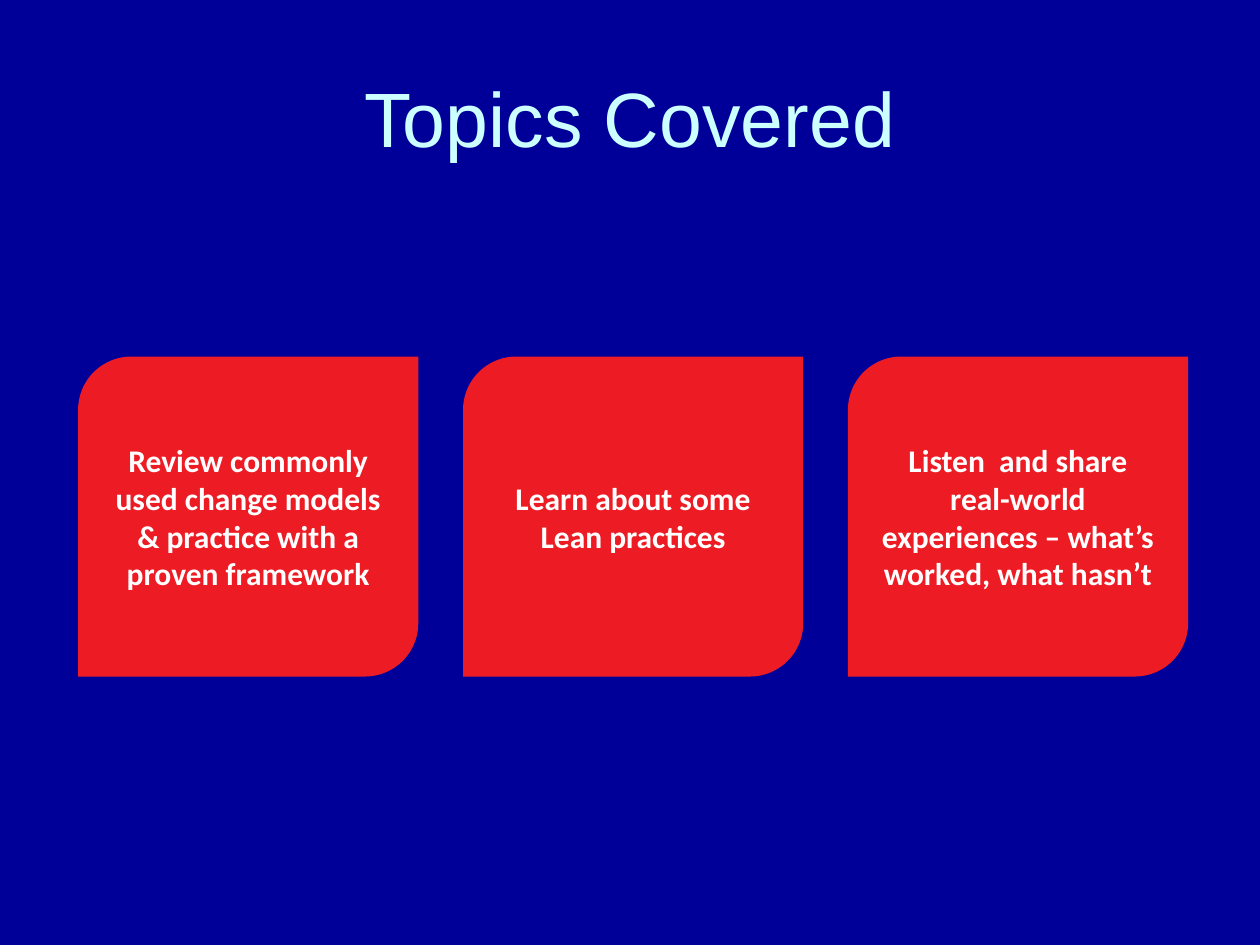
from dataclasses import dataclass

from pptx import Presentation
from pptx.dml.color import RGBColor
from pptx.enum.shapes import MSO_SHAPE
from pptx.enum.text import MSO_ANCHOR, PP_ALIGN
from pptx.util import Inches, Pt

CARD_SHAPE = MSO_SHAPE.ROUND_2_DIAG_RECTANGLE
MIDDLE = MSO_ANCHOR.MIDDLE
CENTER = PP_ALIGN.CENTER


@dataclass(frozen=True)
class Theme:
    """Colours, fonts and type sizes of the deck."""
    background: str = "000099"
    card: str = "ED1C24"
    card_text: str = "FFFFFF"
    title_text: str = "CCFFFF"
    title_font: str = "Arial"
    card_font: str = "Calibri"
    title_size: int = 44
    card_size: int = 18


THEME = Theme()
TOPICS = [
    "Review commonly used change models & practice with a proven framework",
    "Learn about some\nLean practices",
    "Listen  and share\nreal-world experiences – what’s worked, what hasn’t",
]


def write_text(shape, text, *, font, size, color, bold=False):
    """Write centred text into a shape, with newlines as line breaks."""
    frame = shape.text_frame
    frame.word_wrap = True
    frame.vertical_anchor = MIDDLE
    para = frame.paragraphs[0]
    para.text = text
    para.alignment = CENTER
    for span in para.runs:
        span.font.name = font
        span.font.size = Pt(size)
        span.font.bold = bold
        span.font.color.rgb = RGBColor.from_string(color)


def add_title(page, text, left, top, width, height):
    """Place the slide title in the given box."""
    box = page.shapes.add_textbox(left, top, width, height)
    write_text(box, text, font=THEME.title_font, size=THEME.title_size,
               color=THEME.title_text)


def add_card(page, text, left, top, width, height):
    """Place one topic card in the given box."""
    card = page.shapes.add_shape(CARD_SHAPE, left, top, width, height)
    card.shadow.inherit = False
    card.fill.solid()
    card.fill.fore_color.rgb = RGBColor.from_string(THEME.card)
    card.line.fill.background()
    write_text(card, text, font=THEME.card_font, size=THEME.card_size,
               color=THEME.card_text, bold=True)


def add_card_row(page, topics, left, top, width, height, card_width):
    """Spread equal cards over the given box with equal gaps."""
    step = (width - card_width) / (len(topics) - 1)
    for index, topic in enumerate(topics):
        add_card(page, topic, round(left + index * step), top, card_width, height)


def main():
    """Build the slide and save the deck."""
    deck = Presentation()
    deck.slide_width, deck.slide_height = Inches(10), Inches(7.5)
    page = deck.slides.add_slide(deck.slide_layouts[6])
    page.background.fill.solid()
    page.background.fill.fore_color.rgb = RGBColor.from_string(THEME.background)
    add_card_row(page, TOPICS, Inches(0.62), Inches(2.83), Inches(8.81),
                 Inches(2.54), card_width=Inches(2.7))
    add_title(page, "Topics Covered", Inches(0.5), Inches(0.3), Inches(9),
              Inches(1.25))
    deck.save("out.pptx")


if __name__ == "__main__":
    main()
